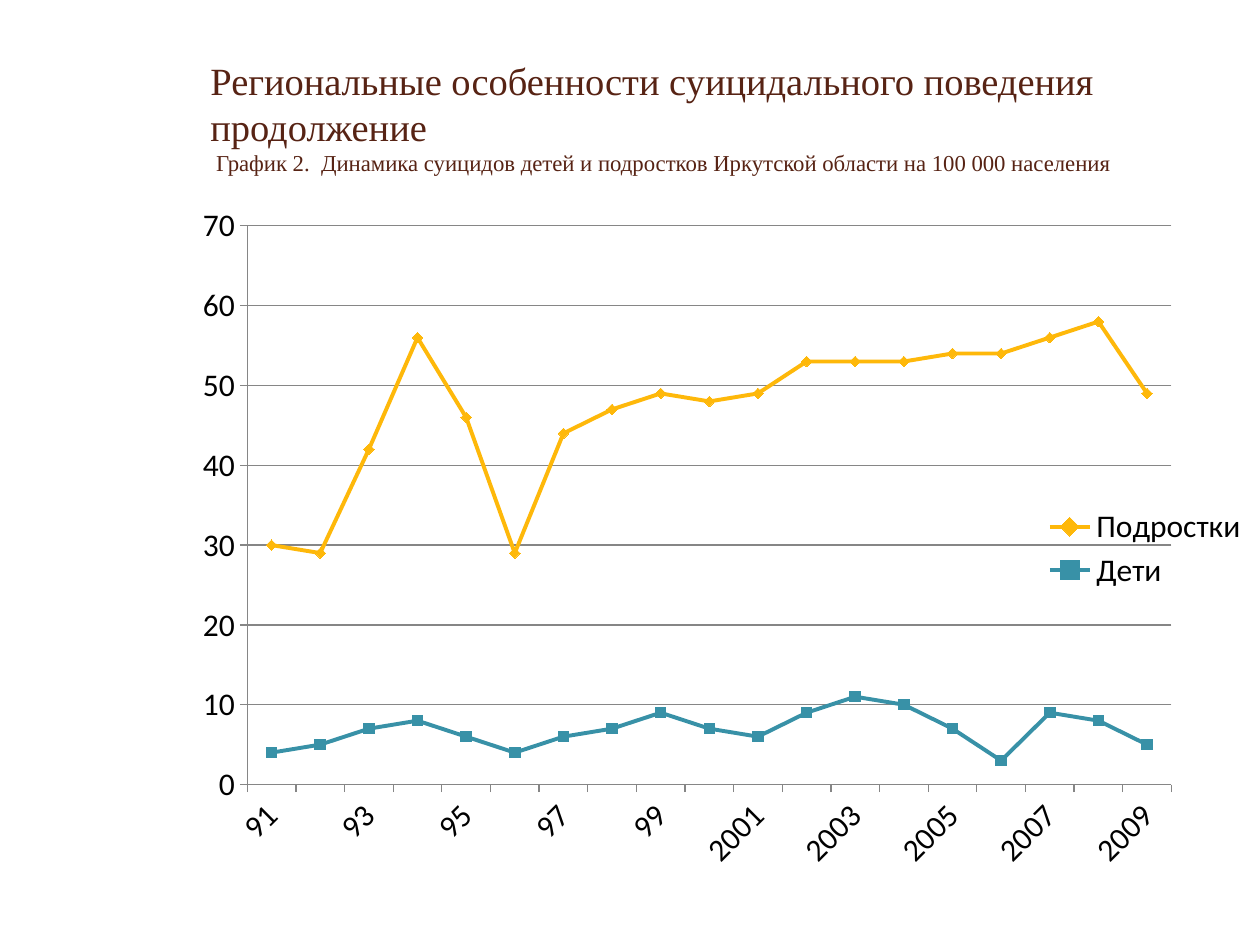
from pptx import Presentation
from pptx.chart.data import CategoryChartData as Data
from pptx.dml.color import RGBColor
from pptx.enum.chart import XL_CHART_TYPE as Kind, XL_LEGEND_POSITION as Side
from pptx.enum.chart import XL_MARKER_STYLE as Mark, XL_TICK_MARK as Tick
from pptx.enum.text import MSO_ANCHOR as Anchor, PP_ALIGN as Align
from pptx.oxml import parse_xml
from pptx.oxml.ns import nsdecls, qn
from pptx.util import Inches, Pt

TITLE = ("Региональные особенности суицидального поведения ", "продолжение",
         " График 2.  Динамика суицидов детей и подростков Иркутской области"
         " на 100 000 населения")
YEARS = [str(y if y > 1999 else y - 1900) for y in range(1991, 2010)]
ROWS = (
    ("Дети", "3891A7", Mark.SQUARE,
     (4, 5, 7, 8, 6, 4, 6, 7, 9, 7, 6, 9, 11, 10, 7, 3, 9, 8, 5)),
    ("Подростки", "FEB80A", Mark.DIAMOND,
     (26, 24, 35, 48, 40, 25, 38, 40, 40, 41, 43, 44, 42, 43, 47, 51, 47, 50, 44)),
)


def paint(hue):
    """Turn a hex string into a colour."""
    return RGBColor.from_string(hue)


def place(node, spot, box, inner=False):
    """Give a chart part a manual layout, in fractions of the chart."""
    for old in node.findall(qn("c:layout")):
        node.remove(old)
    tags = '<c:layoutTarget val="inner"/>' if inner else ""
    tags += '<c:xMode val="edge"/><c:yMode val="edge"/>'
    tags += "".join(f'<c:{key} val="{val}"/>' for key, val in zip("xywh", box))
    node.insert(spot, parse_xml(
        f'<c:layout {nsdecls("c")}><c:manualLayout>{tags}</c:manualLayout></c:layout>'))


class Deck:
    """Hold the style and the current slide."""

    def __init__(self):
        """Open a deck with one title-only slide."""
        self.ink, self.grey, self.text = "572314", "868686", "000000"
        self.serif, self.sans = "Times New Roman", "Calibri"
        self.prs = Presentation()
        self.prs.slide_width, self.prs.slide_height = Inches(10), Inches(7.5)
        self.slide = self.prs.slides.add_slide(self.prs.slide_layouts[5])

    def title(self, lines, sizes, box):
        """Fill and format the title placeholder."""
        shape = self.slide.shapes.title
        shape.left, shape.top, shape.width, shape.height = map(Inches, box)
        frame = shape.text_frame
        frame.word_wrap, frame.vertical_anchor = True, Anchor.MIDDLE
        para = frame.paragraphs[0]
        para.text = "\v".join(lines)
        para.alignment = Align.LEFT
        for run, size in zip(para.runs, sizes):
            run.font.name, run.font.size = self.serif, Pt(size)
            run.font.color.rgb = paint(self.ink)

    def rule(self, line):
        """Style an axis or grid line."""
        line.color.rgb, line.width = paint(self.grey), Pt(0.75)

    def chart(self, cats, rows, box):
        """Draw the stacked line chart."""
        data = Data()
        data.categories = cats
        for name, _, _, vals in rows:
            data.add_series(name, vals)
        chart = self.slide.shapes.add_chart(
            Kind.LINE_MARKERS_STACKED, *map(Inches, box), data).chart
        chart.has_title = False
        chart.font.name, chart.font.size = self.sans, Pt(18)
        chart.font.color.rgb = paint(self.text)
        chart.plots[0].vary_by_categories = False
        for line, (_, hue, mark, _) in zip(chart.plots[0].series, rows):
            line.smooth = False
            line.format.line.color.rgb, line.format.line.width = paint(hue), Pt(2.25)
            line.marker.style, line.marker.size = mark, 6
            line.marker.format.fill.solid()
            line.marker.format.fill.fore_color.rgb = paint(hue)
            line.marker.format.line.color.rgb = paint(hue)
        for axis in (chart.category_axis, chart.value_axis):
            axis.major_tick_mark, axis.minor_tick_mark = Tick.OUTSIDE, Tick.NONE
            self.rule(axis.format.line)
        axis.minimum_scale, axis.maximum_scale, axis.major_unit = 0, 70, 10
        axis.has_major_gridlines = True
        self.rule(axis.major_gridlines.format.line)
        chart.has_legend = True
        chart.legend.position = Side.RIGHT
        chart.legend.include_in_layout = False
        root = chart.element.find(qn("c:chart"))
        place(root.find(qn("c:plotArea")), 0, (0.073, 0.038, 0.846, 0.792), True)
        place(root.find(qn("c:legend")), 1, (0.8, 0.43, 0.19, 0.13))


def main():
    """Build and save the slide."""
    deck = Deck()
    deck.title(TITLE, (22, 22, 13), (1.57, 0.3, 8.2, 1.25))
    deck.chart(YEARS, ROWS, (1.33, 1.58, 8.67, 5.6))
    deck.prs.save("out.pptx")


if __name__ == "__main__":
    main()
